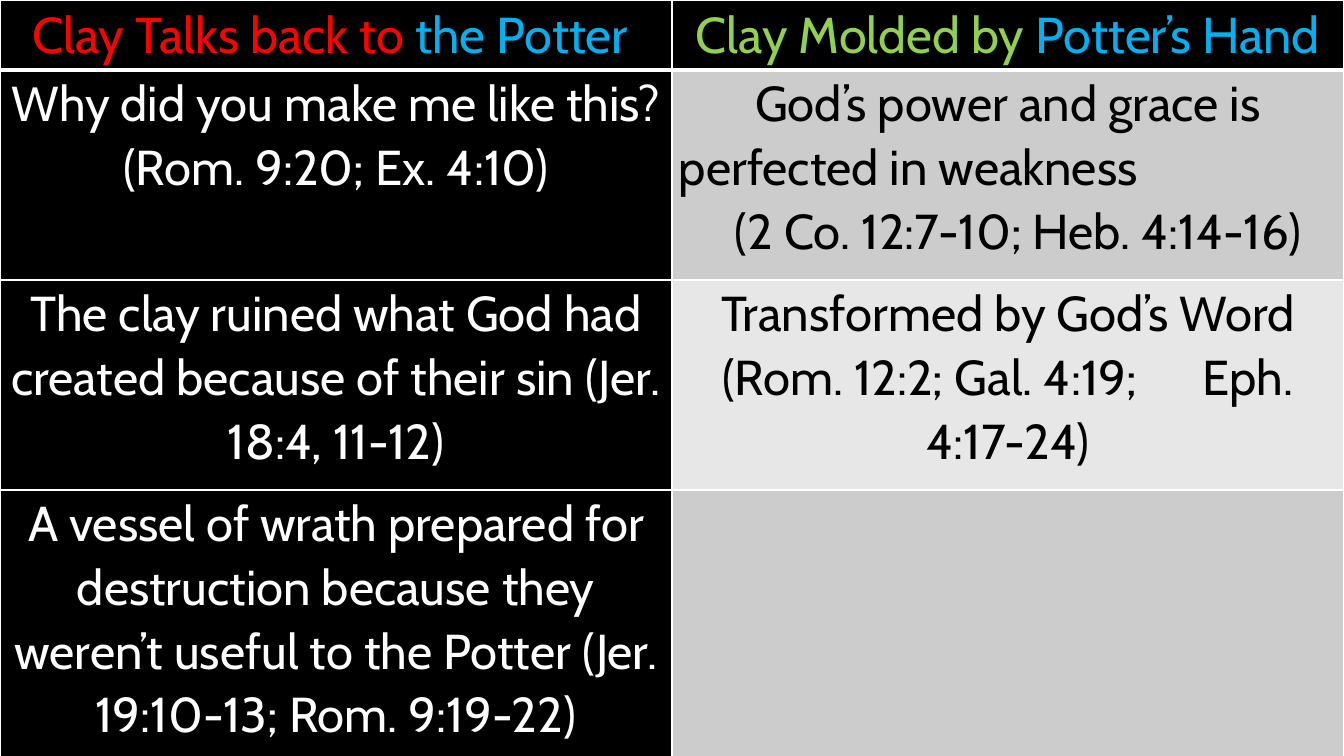
"""Builds the slide that sets the clay that talks back beside the clay that is molded."""
import pptx
import pptx.dml.color
import pptx.enum.text
import pptx.oxml
import pptx.oxml.ns
import pptx.util

RGB = pptx.dml.color.RGBColor
BLACK = RGB(0x00, 0x00, 0x00)
WHITE = RGB(0xFF, 0xFF, 0xFF)
RED = RGB(0xFF, 0x00, 0x00)
BLUE = RGB(0x00, 0xB0, 0xF0)
GREEN = RGB(0x92, 0xD0, 0x50)
GRAY = RGB(0xCC, 0xCC, 0xCC)
PALE = RGB(0xE7, 0xE7, 0xE7)

ALIGN = pptx.enum.text.PP_ALIGN
FONT = "Cabin"
HEAD_PT, BODY_PT = 36, 35
LINE_SPACING = 1.07
SLIDE_W, SLIDE_H = 1344, 756
ROW_HEIGHTS = [70, 210, 210, 269]
INSET = 7
VERSE_INDENT = 20
VERSE_GAP_PT = 39

HEADINGS = [
    [("Clay Talks back to ", RED), ("the Potter ", BLUE)],
    [("Clay Molded by ", GREEN), ("Potter’s Hand", BLUE)],
]
TALKS_BACK = [
    "Why did you make me like this? (Rom. 9:20; Ex. 4:10)",
    "The clay ruined what God had created because of their sin (Jer. 18:4, 11-12)",
    "A vessel of wrath prepared for destruction because they weren’t useful to the Potter "
    "(Jer. 19:10-13; Rom. 9:19-22)",
]
MOLDED = [
    [
        (["God’s power and grace is"], ALIGN.CENTER, 0),
        (["perfected in weakness"], ALIGN.LEFT, 0),
        (["(2 Co. 12:7-10; Heb. 4:14-16)"], ALIGN.CENTER, VERSE_INDENT),
    ],
    [(["Transformed by God’s Word (Rom. 12:2; Gal. 4:19;", " ", "Eph. 4:17-24)"], ALIGN.CENTER, 0)],
    [],
]
MOLDED_FILLS = [GRAY, PALE, GRAY]


def px(n):
    return pptx.util.Emu(round(n * 12192000 / SLIDE_W))


def add_border(cell, side, points):
    ns = pptx.oxml.ns.nsdecls("a")
    return pptx.oxml.parse_xml(
        f'<a:ln{side} {ns} w="{points * 12700}"><a:solidFill>'
        f'<a:srgbClr val="{WHITE}"/></a:solidFill></a:ln{side}>'
    )


def fill_cell(cell, row, paragraphs, fill, size):
    margins = {"margin_left": px(INSET), "margin_right": px(INSET), "margin_top": 0, "margin_bottom": 0}
    for name, value in margins.items():
        setattr(cell, name, value)
    cell.fill.solid()
    cell.fill.fore_color.rgb = fill
    widths = {"L": 1, "R": 1, "T": 3 if row == 1 else 1, "B": 3 if row == 0 else 1}
    for i, (side, points) in enumerate(widths.items()):
        cell._tc.get_or_add_tcPr().insert(i, add_border(cell, side, points))
    tf = cell.text_frame
    for i, (runs, align, indent) in enumerate(paragraphs):
        p = tf.add_paragraph() if i else tf.paragraphs[0]
        p.alignment = align
        p.line_spacing = LINE_SPACING
        if indent:
            p._p.get_or_add_pPr().set("marL", str(px(indent)))
        for text, color in runs:
            r = p.add_run()
            r.text = text
            for name, value in {"name": FONT, "size": pptx.util.Pt(size), "bold": False}.items():
                setattr(r.font, name, value)
            r.font.color.rgb = color
            if text == " ":
                r._r.get_or_add_rPr().set("spc", str(VERSE_GAP_PT * 100))


def main():
    prs = pptx.Presentation()
    prs.slide_width, prs.slide_height = px(SLIDE_W), px(SLIDE_H)
    s = prs.slides.add_slide(prs.slide_layouts[6])
    s.background.fill.solid()
    s.background.fill.fore_color.rgb = BLACK

    frame = s.shapes.add_table(len(ROW_HEIGHTS), 2, 0, 0, px(SLIDE_W), px(sum(ROW_HEIGHTS)))
    table = frame.table
    for row, height in zip(table.rows, ROW_HEIGHTS):
        row.height = px(height)

    for col, runs in enumerate(HEADINGS):
        fill_cell(table.cell(0, col), 0, [(runs, ALIGN.CENTER, 0)], BLACK, HEAD_PT)
    for row, (text, molded, fill) in enumerate(zip(TALKS_BACK, MOLDED, MOLDED_FILLS), 1):
        fill_cell(table.cell(row, 0), row, [([(text, WHITE)], ALIGN.CENTER, 0)], BLACK, BODY_PT)
        paragraphs = [([(t, BLACK) for t in texts], align, indent) for texts, align, indent in molded]
        fill_cell(table.cell(row, 1), row, paragraphs, fill, BODY_PT)

    prs.save("out.pptx")


if __name__ == "__main__":
    main()
